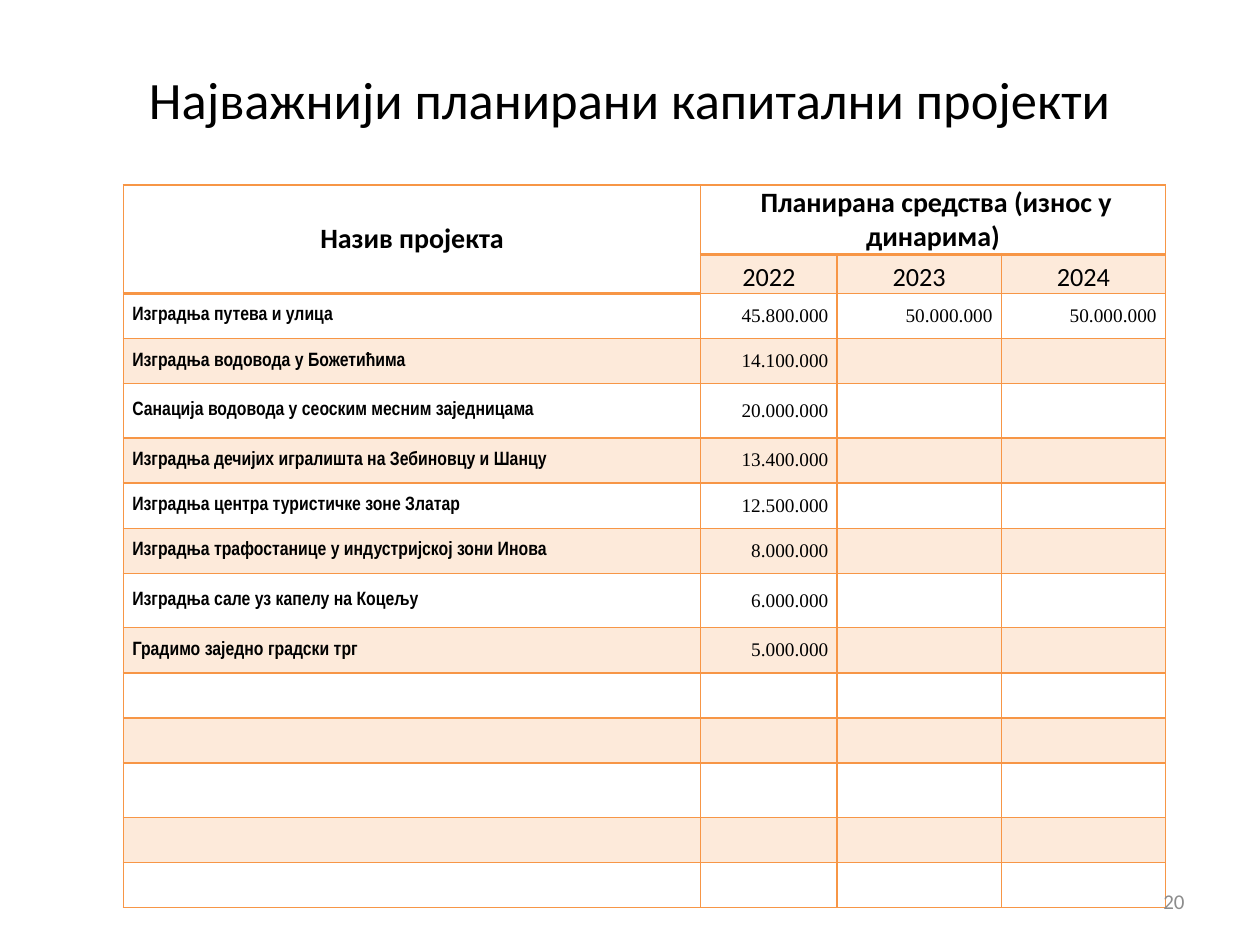
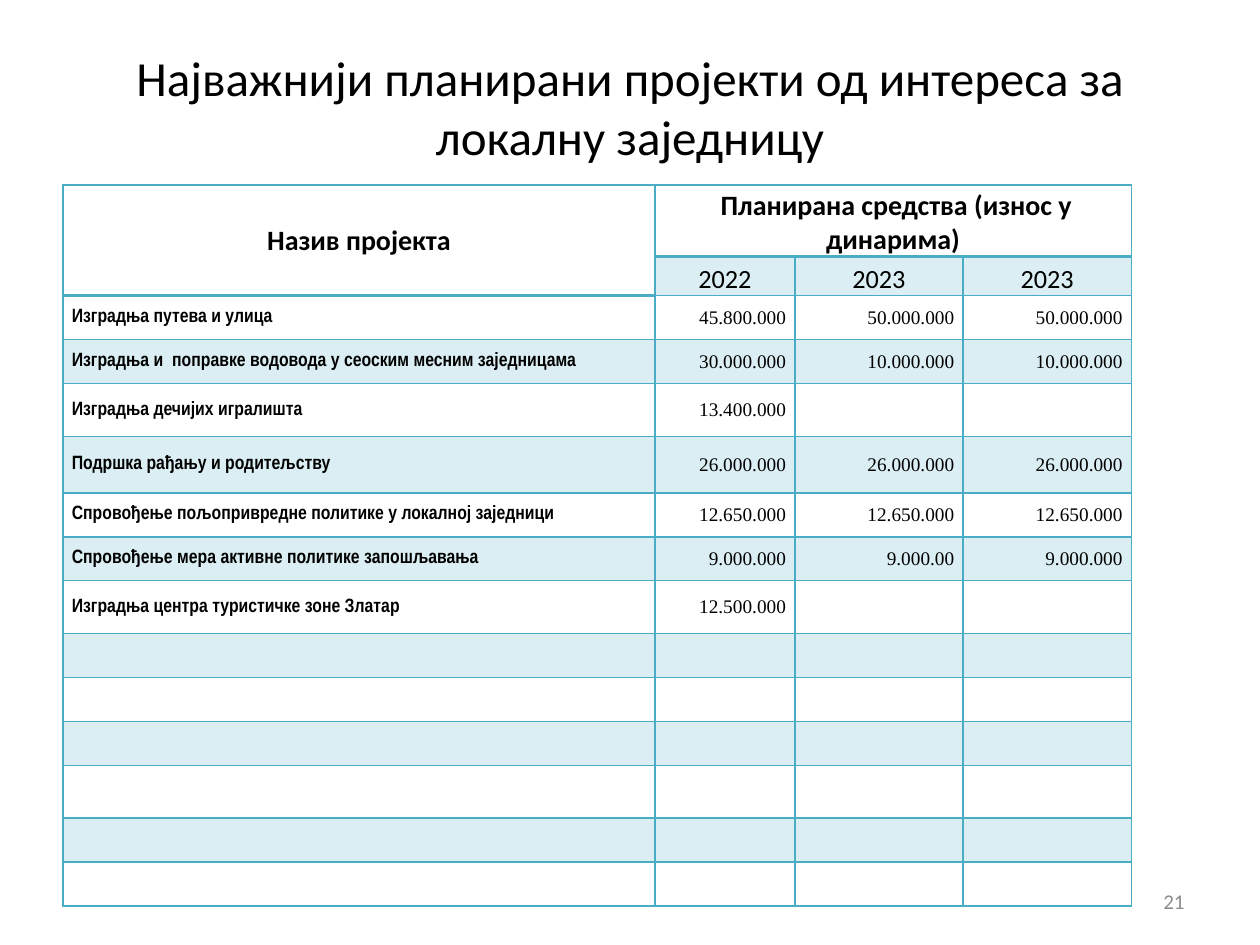
from dataclasses import dataclass

from lxml import etree
from pptx import Presentation
from pptx import util as u
from pptx.dml.color import RGBColor
from pptx.enum import text
from pptx.oxml.ns import qn

ALIGN, ANCHOR = text.PP_ALIGN, text.MSO_ANCHOR


@dataclass(frozen=True)
class Theme:
    """Colours, fonts and type sizes shared by the slides."""
    ink: str = "000000"
    muted: str = "8C8C8C"
    orange: str = "F79646"
    teal: str = "4BACC6"
    tint: int = 20
    sans: str = "Calibri"
    narrow: str = "Arial Narrow"
    serif: str = "Times New Roman"
    head: int = 16
    year: int = 15
    body: int = 11
    footer: int = 12
    thin: int = 1
    thick: int = 2


T = Theme()
WIDTH, HEIGHT = u.Inches(10), u.Inches(7.5)
COLUMNS = (55.4, 13.1, 15.75, 15.75)
BODY_ROWS = 13

CAPITAL = dict(
    title="Најважнији планирани капитални пројекти",
    title_size=30, title_box=(0.05, 0.04, 0.9, 0.128),
    page="20", accent=T.orange, table_box=(0.098, 0.196, 0.827, 0.765),
    years=("2022", "2023", "2024"), header_rows=(55, 31),
    row=36, tall=43, special={},
    projects=[
        ("Изградња путева и улица", "45.800.000", "50.000.000", "50.000.000"),
        ("Изградња водовода у Божетићима", "14.100.000"),
        ("Санација водовода у сеоским месним заједницама", "20.000.000"),
        ("Изградња дечијих игралишта на Зебиновцу и Шанцу", "13.400.000"),
        ("Изградња центра туристичке зоне Златар", "12.500.000"),
        ("Изградња трафостанице у индустријској зони Инова", "8.000.000"),
        ("Изградња сале уз капелу на Коцељу", "6.000.000"),
        ("Градимо заједно градски трг", "5.000.000"),
    ])

COMMUNITY = dict(
    title="Најважнији планирани пројекти од интереса за локалну заједницу",
    title_size=28, title_box=(0.05, 0.04, 0.9, 0.145),
    page="21", accent=T.teal, table_box=(0.05, 0.196, 0.848, 0.763),
    years=("2022", "2023", "2023"), header_rows=(57, 31),
    row=35, tall=42, special={3: 45},
    projects=[
        ("Изградња путева и улица", "45.800.000", "50.000.000", "50.000.000"),
        ("Изградња и  поправке водовода у сеоским месним заједницама",
         "30.000.000", "10.000.000", "10.000.000"),
        ("Изградња дечијих игралишта", "13.400.000"),
        ("Подршка рађању и родитељству", "26.000.000", "26.000.000", "26.000.000"),
        ("Спровођење пољопривредне политике у локалној заједници",
         "12.650.000", "12.650.000", "12.650.000"),
        ("Спровођење мера активне политике запошљавања",
         "9.000.000", "9.000.00", "9.000.000"),
        ("Изградња центра туристичке зоне Златар", "12.500.000"),
    ])


def place(box):
    """Turn shares of the slide into left, top, width and height."""
    x, y, w, h = box
    return int(x * WIDTH), int(y * HEIGHT), int(w * WIDTH), int(h * HEIGHT)


def write(tf, words, *, size, font=T.sans, color=T.ink, bold=False, align=ALIGN.LEFT):
    """Write one formatted paragraph into a text frame."""
    p = tf.paragraphs[0]
    p.alignment = align
    r = p.add_run()
    r.text = words
    r.font.size, r.font.name, r.font.bold = u.Pt(size), font, bold
    r.font.color.rgb = RGBColor.from_string(color)


def add_border(cell, accent, **widths):
    """Draw the edges of a cell, with widths in points by edge letter."""
    tc_pr = cell._tc.get_or_add_tcPr()
    for edge in "LRTB":
        ln = etree.SubElement(tc_pr, qn(f"a:ln{edge}"),
                              w=str(u.Pt(widths.get(edge, T.thin))))
        fill = etree.SubElement(ln, qn("a:solidFill"))
        etree.SubElement(fill, qn("a:srgbClr"), val=accent)


def style_cell(cell, row, col, accent):
    """Give a cell its margins, borders and band tint."""
    cell.margin_left = cell.margin_right = u.Inches(0.07)
    cell.margin_top = cell.margin_bottom = 0
    under_head = 2 if col == 0 else 1
    add_border(cell, accent,
               T=T.thick if row == under_head else T.thin,
               B=T.thick if row < under_head else T.thin)
    cell.vertical_anchor = ANCHOR.BOTTOM if row < 2 and col else ANCHOR.MIDDLE
    if row % 2 and row >= under_head:
        cell.fill.solid()
        cell.fill.fore_color.rgb = RGBColor.from_string(accent)
        color = cell._tc.tcPr.find(f"{qn('a:solidFill')}/{qn('a:srgbClr')}")
        etree.SubElement(color, qn("a:alpha"), val=str(T.tint * 1000))
    else:
        cell.fill.background()


def fill_header(table, years):
    """Merge and fill the two header rows."""
    table.cell(0, 0).merge(table.cell(1, 0))
    table.cell(0, 1).merge(table.cell(0, 3))
    for col, words in enumerate(("Назив пројекта",
                                 " Планирана средства (износ у динарима)")):
        write(table.cell(0, col).text_frame, words, size=T.head, bold=True,
              align=ALIGN.CENTER)
    for col, year in enumerate(years, 1):
        write(table.cell(1, col).text_frame, year, size=T.year, align=ALIGN.CENTER)


def fill_projects(table, projects):
    """Write project names and amounts below the header."""
    name_format = dict(font=T.narrow, bold=True)
    amount_format = dict(font=T.serif, align=ALIGN.RIGHT)
    for row, project in enumerate(projects, 2):
        for col, words in enumerate(project):
            write(table.cell(row, col).text_frame, words, size=T.body,
                  **(amount_format if col else name_format))


def add_project_table(s, plan):
    """Place the table of projects in its box."""
    x, y, w, h = place(plan["table_box"])
    body = [plan["special"].get(i, plan["tall"] if i % 4 == 2 else plan["row"])
            for i in range(BODY_ROWS)]
    rows = [*plan["header_rows"], *body]
    table = s.shapes.add_table(len(rows), len(COLUMNS), x, y, w, h).table
    table.first_row = table.horz_banding = False
    for column, share in zip(table.columns, COLUMNS):
        column.width = int(w * share / sum(COLUMNS))
    for line, share in zip(table.rows, rows):
        line.height = int(h * share / sum(rows))
    for row in range(len(rows)):
        for col in range(len(COLUMNS)):
            style_cell(table.cell(row, col), row, col, plan["accent"])
    fill_header(table, plan["years"])
    fill_projects(table, plan["projects"])


def add_title(s, plan):
    """Move and fill the title placeholder."""
    sp = s.shapes.title
    sp.left, sp.top, sp.width, sp.height = place(plan["title_box"])
    tf = sp.text_frame
    tf.word_wrap, tf.auto_size = True, text.MSO_AUTO_SIZE.NONE
    tf.vertical_anchor = ANCHOR.MIDDLE
    write(tf, plan["title"], size=plan["title_size"], align=ALIGN.CENTER)


def add_page_number(s, page):
    """Put the page number at the bottom right."""
    tf = s.shapes.add_textbox(*place((0.717, 0.927, 0.233, 0.053))).text_frame
    tf.word_wrap, tf.vertical_anchor = True, ANCHOR.MIDDLE
    write(tf, page, size=T.footer, color=T.muted, align=ALIGN.RIGHT)


def add_plan_slide(prs, plan):
    """Build one slide of planned projects."""
    s = prs.slides.add_slide(prs.slide_layouts[5])
    add_title(s, plan)
    add_project_table(s, plan)
    add_page_number(s, plan["page"])


def main():
    """Build and save the presentation."""
    prs = Presentation()
    prs.slide_width, prs.slide_height = WIDTH, HEIGHT
    for plan in (CAPITAL, COMMUNITY):
        add_plan_slide(prs, plan)
    prs.save("out.pptx")


if __name__ == "__main__":
    main()
